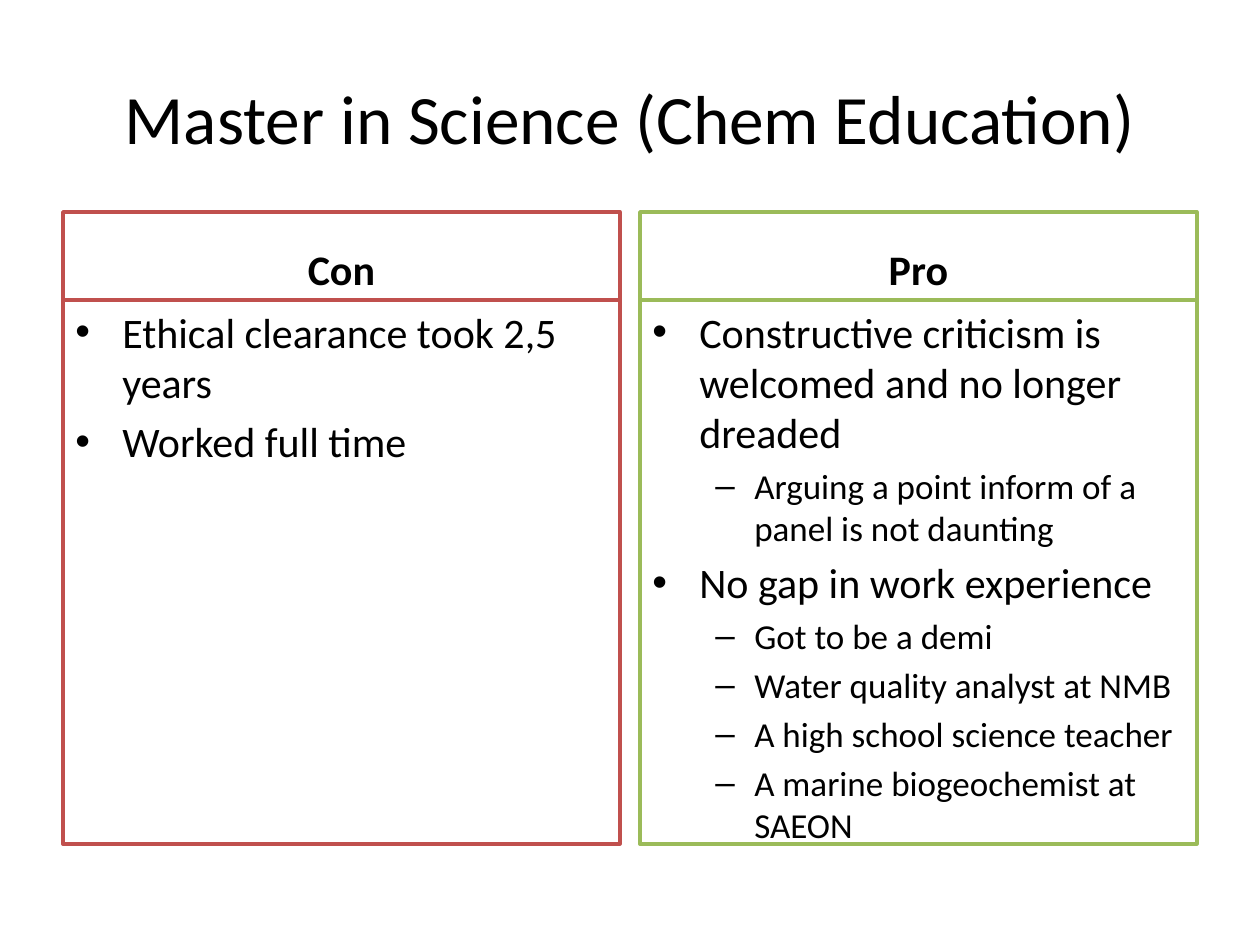
from dataclasses import dataclass

from lxml import etree
from pptx import Presentation
from pptx import util as u
from pptx.dml.color import RGBColor
from pptx.enum import shapes, text
from pptx.oxml.ns import qn

PX = 914400 // 126


@dataclass(frozen=True)
class Theme:
    font: str = "Calibri"
    ink: RGBColor = RGBColor.from_string("000000")
    paper: RGBColor = RGBColor.from_string("FFFFFF")
    con: RGBColor = RGBColor.from_string("C0504D")
    pro: RGBColor = RGBColor.from_string("9BBB59")
    title: float = 39.6
    main: int = 24
    sub: int = 20


theme = Theme()
# level: (bullet, left margin, hanging indent, type size)
LEVELS = [("•", 47, 47, theme.main), ("–", 102, 39, theme.sub)]
LEFT, GAP, COLUMN_WIDTH = 63, 20, 557
HEAD_TOP, HEAD_HEIGHT, BODY_HEIGHT = 212, 88, 544

columns = [
    ("Con", theme.con, [
        (0, "Ethical clearance took 2,5 years"),
        (0, "Worked full time"),
    ]),
    ("Pro", theme.pro, [
        (0, "Constructive criticism is welcomed and no longer dreaded"),
        (1, "Arguing a point inform of a panel is not daunting"),
        (0, "No gap in work experience"),
        (1, "Got to be a demi"),
        (1, "Water quality analyst at NMB"),
        (1, "A high school science teacher"),
        (1, "A marine biogeochemist at SAEON"),
    ]),
]


def write(para, words, size, bold=False, align=text.PP_ALIGN.CENTER):
    para.text = words
    para.alignment = align
    para.font.name = theme.font
    para.font.size = u.Pt(size)
    para.font.bold = bold
    para.font.color.rgb = theme.ink


def add_panel(left, top, height, color, anchor):
    """Add an outlined rectangle one column wide and return its text frame."""
    panel = page.shapes.add_shape(
        shapes.MSO_SHAPE.RECTANGLE, left * PX, top * PX, COLUMN_WIDTH * PX, height * PX)
    panel.shadow.inherit = False
    panel.fill.solid()
    panel.fill.fore_color.rgb = theme.paper
    panel.line.color.rgb = color
    panel.line.width = u.Pt(2)
    panel.text_frame.word_wrap = True
    panel.text_frame.vertical_anchor = anchor
    return panel.text_frame


deck = Presentation()
deck.slide_width, deck.slide_height = 1260 * PX, 945 * PX
page = deck.slides.add_slide(deck.slide_layouts[6])

title = page.shapes.add_textbox(LEFT * PX, 38 * PX, 1134 * PX, 158 * PX).text_frame
title.word_wrap = True
title.vertical_anchor = text.MSO_ANCHOR.MIDDLE
write(title.paragraphs[0], "Master in Science (Chem Education)", theme.title)

for index, (heading, color, points) in enumerate(columns):
    left = LEFT + index * (COLUMN_WIDTH + GAP)
    head = add_panel(left, HEAD_TOP, HEAD_HEIGHT, color, text.MSO_ANCHOR.BOTTOM)
    write(head.paragraphs[0], heading, theme.main, bold=True)

    body = add_panel(left, HEAD_TOP + HEAD_HEIGHT, BODY_HEIGHT, color, text.MSO_ANCHOR.TOP)
    for number, (level, words) in enumerate(points):
        bullet, margin, hanging, size = LEVELS[level]
        para = body.add_paragraph() if number else body.paragraphs[0]
        para.level = level
        if number:
            para.space_before = u.Pt(size * 0.2)
        properties = para._p.get_or_add_pPr()
        properties.set("marL", str(margin * PX))
        properties.set("indent", str(-hanging * PX))
        etree.SubElement(properties, qn("a:buFont"), typeface="Arial")
        etree.SubElement(properties, qn("a:buChar"), char=bullet)
        write(para, words, size, align=text.PP_ALIGN.LEFT)

deck.save("out.pptx")
